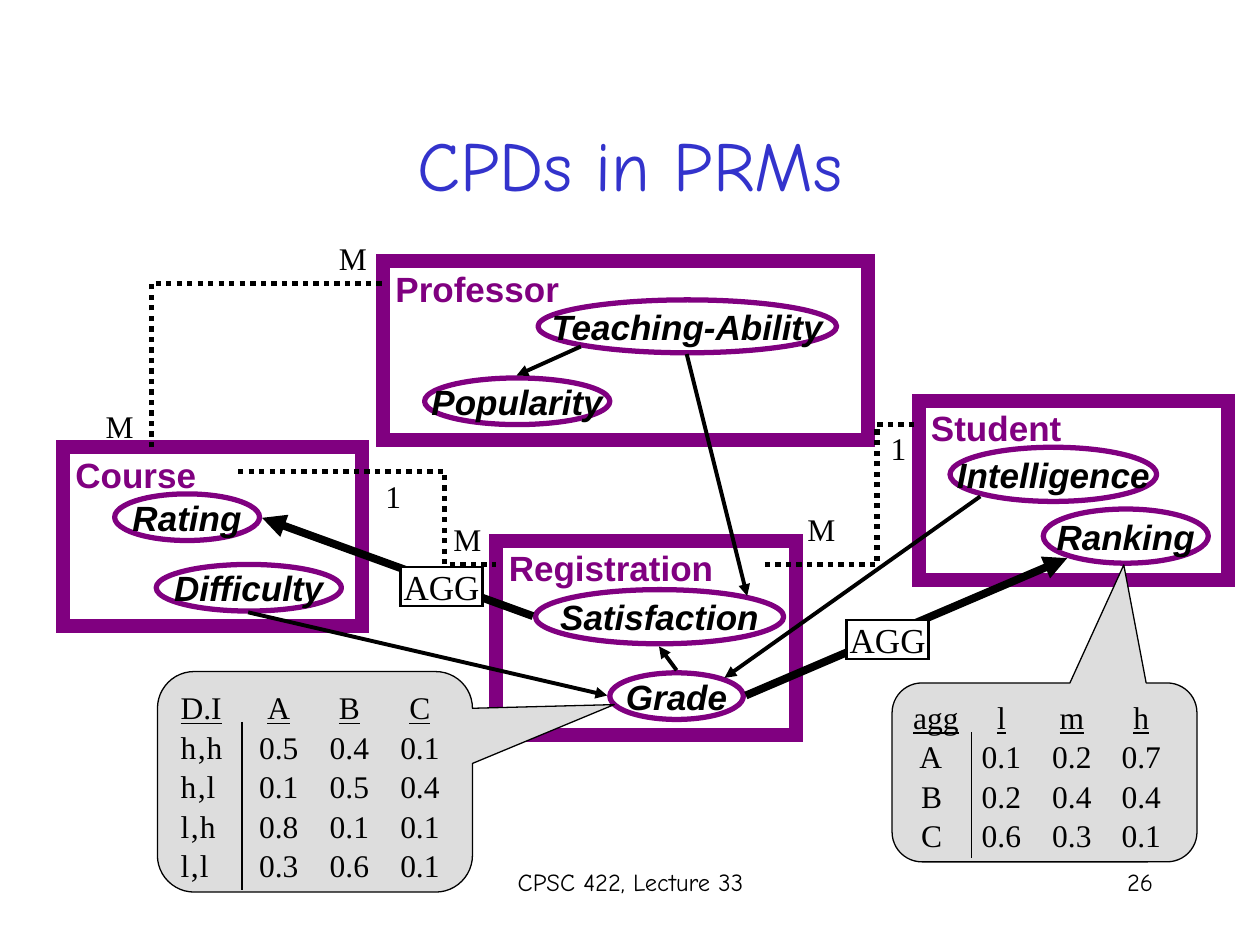
from lxml.etree import SubElement
from pptx import Presentation
from pptx.dml.color import RGBColor
from pptx.enum.dml import MSO_LINE
from pptx.enum.shapes import MSO_CONNECTOR, MSO_SHAPE
from pptx.enum.text import MSO_ANCHOR, PP_ALIGN
from pptx.oxml.ns import qn
from pptx.util import Inches, Pt

COLORS = {"ink": "000000", "paper": "FFFFFF", "title": "3333CC",
          "frame": "800080", "note": "DDDDDD"}
SANS, SERIF, COMIC = "Arial", "Times New Roman", "Comic Neue"
LEFT, MID, RIGHT = PP_ALIGN.LEFT, PP_ALIGN.CENTER, PP_ALIGN.RIGHT


def color(key):
    return RGBColor.from_string(COLORS[key])


class Board:
    def __init__(self, deck):
        self.shapes = deck.slides.add_slide(deck.slide_layouts[6]).shapes

    def style(self, para, size, face, ink="ink", bold=False, slant=False, align=LEFT):
        para.alignment = align
        font = para.font
        font.size, font.name = Pt(size), face
        font.bold, font.italic = bold, slant
        font.color.rgb = color(ink)

    def text(self, words, at, size, face, anchor=MSO_ANCHOR.TOP, **look):
        frame = self.shapes.add_textbox(*map(Inches, at)).text_frame
        frame.word_wrap = True
        frame.vertical_anchor = anchor
        frame.text = words
        self.style(frame.paragraphs[0], size, face, **look)

    def shape(self, kind, at, fill, line, width):
        shape = self.shapes.add_shape(kind, *map(Inches, at))
        shape.shadow.inherit = False
        shape.fill.solid()
        shape.fill.fore_color.rgb = color(fill)
        shape.line.color.rgb = color(line)
        shape.line.width = Pt(width)
        return shape

    def box(self, at, line, width):
        box = self.shape(MSO_SHAPE.RECTANGLE, at, "paper", line, width)
        SubElement(box.line._get_or_add_ln(), qn("a:miter"), lim="800000")
        return box

    def label(self, shape, words, face, **look):
        frame = shape.text_frame
        frame.word_wrap = False
        frame.vertical_anchor = MSO_ANCHOR.MIDDLE
        frame.text = words
        self.style(frame.paragraphs[0], 20, face, align=MID, **look)

    def oval(self, words, at):
        oval = self.shape(MSO_SHAPE.OVAL, at, "paper", "frame", 3)
        self.label(oval, words, SANS, bold=True, slant=True)

    def table(self, name, at, wide, ovals):
        self.box(at, "frame", 8)
        self.text(name, (*at[:2], wide, 0.43), 20, SANS, ink="frame", bold=True)
        for words, spot in ovals:
            self.oval(words, spot)

    def line(self, start, end, width, kind=MSO_CONNECTOR.STRAIGHT):
        line = self.shapes.add_connector(kind, *map(Inches, (*start, *end)))
        line.line.color.rgb = color("ink")
        line.line.width = Pt(width)
        SubElement(line._element.spPr, qn("a:effectLst"))
        return line

    def arrow(self, start, end, width=2.25):
        line = self.line(start, end, width)
        SubElement(line.line._get_or_add_ln(), qn("a:tailEnd"), type="triangle")

    def elbow(self, start, end, bend):
        line = self.line(start, end, 3, MSO_CONNECTOR.ELBOW)
        line.line.dash_style = MSO_LINE.ROUND_DOT
        guides = line._element.spPr.find(qn("a:prstGeom")).find(qn("a:avLst"))
        SubElement(guides, qn("a:gd"), name="adj1", fmla=f"val {round(bend * 100000)}")

    def callout(self, at, tip, rows, stops):
        note = self.shape(MSO_SHAPE.ROUNDED_RECTANGULAR_CALLOUT, at, "note", "ink", 0.75)
        note.adjustments[0], note.adjustments[1] = tip
        frame = note.text_frame
        frame.word_wrap = True
        frame.vertical_anchor = MSO_ANCHOR.TOP
        frame.text = "\n".join("\t".join(row.split(",")) for row in rows)
        for spot, para in enumerate(frame.paragraphs):
            tabs = SubElement(para._p.get_or_add_pPr(), qn("a:tabLst"))
            for stop in stops:
                SubElement(tabs, qn("a:tab"), pos=str(Inches(stop)), algn="ctr")
            self.style(para, 18, SERIF)
            para.font.underline = spot == 0
            para.space_after = Pt(0.9)


def main():
    deck = Presentation()
    deck.slide_width, deck.slide_height = Inches(10), Inches(7.5)
    board = Board(deck)
    board.text("CPDs in PRMs", (0.75, 0.67, 8.5, 1.25), 40, COMIC,
               anchor=MSO_ANCHOR.MIDDLE, ink="title", align=MID)

    for name, at, wide, ovals in (
        ("Student", (7.29, 3.18, 2.46, 1.42), 1.52,
         (("Intelligence", (7.54, 3.55, 1.64, 0.43)),
          ("Ranking", (8.28, 4.04, 1.31, 0.43)))),
        ("Course", (0.5, 3.55, 2.37, 1.42), 1.38,
         (("Rating", (0.91, 3.92, 1.15, 0.37)),
          ("Difficulty", (1.24, 4.48, 1.47, 0.37)))),
        ("Professor", (3.04, 2.07, 3.85, 1.42), 1.64,
         (("Popularity", (3.37, 3, 1.47, 0.37)),
          ("Teaching-Ability", (4.27, 2.38, 2.37, 0.42)))),
        ("Registration", (3.94, 4.29, 2.38, 1.54), 2.13,
         (("Grade", (4.84, 5.34, 1.06, 0.37)),
          ("Satisfaction", (4.25, 4.68, 1.97, 0.43)))),
    ):
        board.table(name, at, wide, ovals)

    for start, end in (
        ((4.61, 2.75), (4.1, 2.98)),
        ((5.37, 5.32), (5.23, 5.13)),
        ((5.45, 2.81), (5.93, 4.73)),
        ((1.97, 4.86), (4.82, 5.52)),
        ((7.78, 3.94), (5.75, 5.38)),
    ):
        board.arrow(start, end)
    board.arrow((4.23, 4.89), (2.08, 4.11), 4.5)
    board.arrow((5.92, 5.52), (8.47, 4.43), 4.5)

    board.elbow((1.2, 3.55), (3.04, 2.25), 0)
    board.elbow((1.89, 3.74), (3.94, 4.48), 0.8)
    board.elbow((6.07, 4.48), (7.29, 3.37), 0.73)

    for mark, wide, spots in (
        ("M", 0.41, ((2.59, 1.85), (0.74, 3.18), (3.5, 4.08), (6.31, 4))),
        ("1", 0.33, ((2.96, 3.74), (6.97, 3.36))),
    ):
        for spot in spots:
            board.text(mark, (*spot, wide, 0.4), 18, SERIF)

    for spot in ((6.72, 4.92), (3.18, 4.5)):
        board.label(board.box((*spot, 0.65, 0.31), "ink", 1.5), "AGG", SERIF)

    board.callout((1.25, 5.33, 2.5, 1.75), (0.95, -0.35),
                  ("D.I,A,B,C", "h,h,0.5,0.4,0.1".replace("h,h", "h‚h"),
                   "h‚l,0.1,0.5,0.4", "l‚h,0.8,0.1,0.1", "l‚l,0.3,0.6,0.1"),
                  (0.78, 1.34, 1.9))
    board.line((1.92, 5.73), (1.92, 7.06), 0.75)
    board.callout((7.08, 5.42, 2.42, 1.42), (0.26, -1.16),
                  ("agg,l,m,h", " A,0.1,0.2,0.7", " B,0.2,0.4,0.4", " C,0.6,0.3,0.1"),
                  (0.7, 1.26, 1.81))
    board.line((7.71, 5.81), (7.71, 6.81), 0.75)

    board.text("CPSC 422, Lecture 33", (3.42, 6.83, 3.17, 0.5), 14, COMIC, align=MID)
    board.text("26", (7.17, 6.83, 2.08, 0.5), 14, COMIC, align=RIGHT)
    deck.save("out.pptx")


if __name__ == "__main__":
    main()
